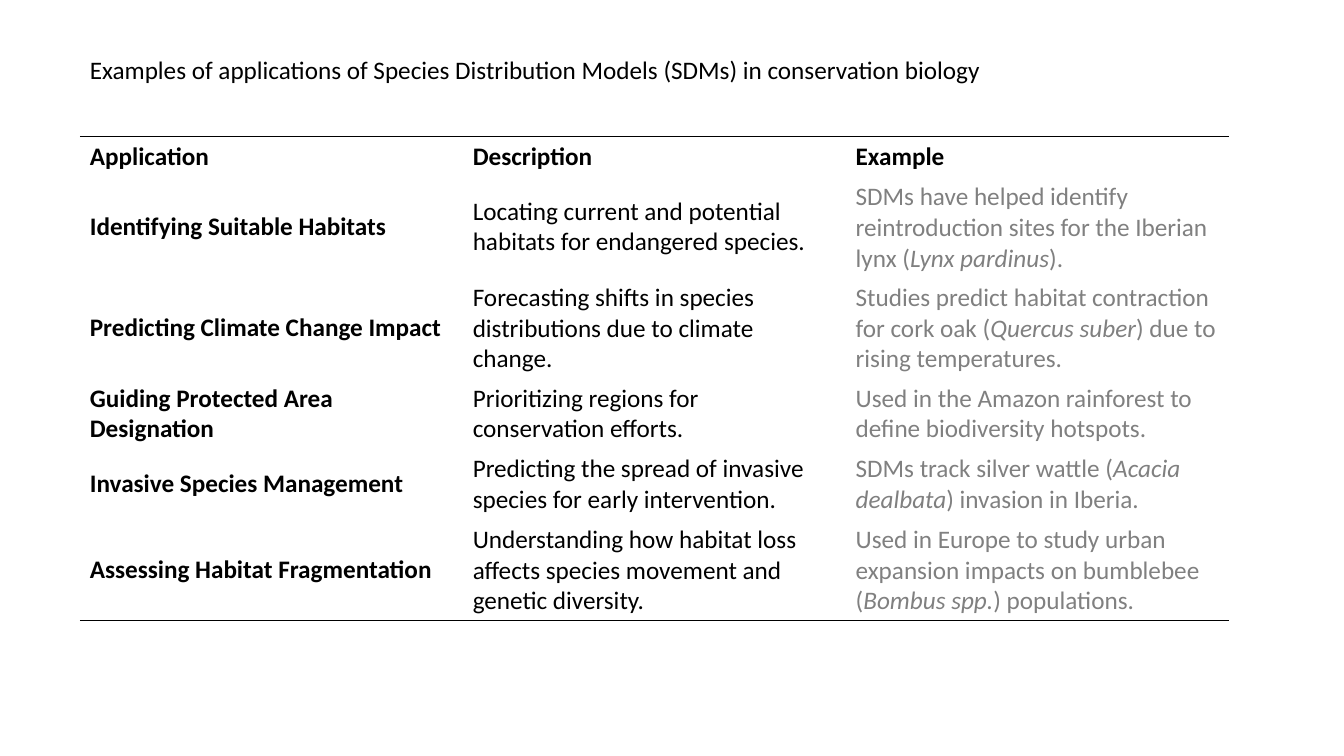
from dataclasses import dataclass

from lxml import etree
from pptx import Presentation
from pptx import util as u
from pptx.dml.color import RGBColor
from pptx.enum import text
from pptx.oxml import ns

BLACK = "000000"
GREY = "808080"
LEFT = u.Cm(2.01)
WIDE = u.Cm(9.65)
LINE = 0.76
PAD = 0.25


@dataclass
class Row:
    name: str
    use: str
    case: str
    lines: int


@dataclass
class Look:
    tint: str = BLACK
    bold: bool = False


ROWS = [
    Row("Application", "Description", "Example", 1),
    Row("Identifying Suitable Habitats",
        "Locating current and potential habitats for endangered species.",
        "SDMs have helped identify reintroduction sites for the Iberian lynx (*Lynx pardinus*).", 3),
    Row("Predicting Climate Change Impact",
        "Forecasting shifts in species distributions due to climate change.",
        "Studies predict habitat contraction for cork oak (*Quercus suber*) due to rising temperatures.", 3),
    Row("Guiding Protected Area Designation",
        "Prioritizing regions for conservation efforts.",
        "Used in the Amazon rainforest to define biodiversity hotspots.", 2),
    Row("Invasive Species Management",
        "Predicting the spread of invasive species for early intervention.",
        "SDMs track silver wattle (*Acacia dealbata*) invasion in Iberia.", 2),
    Row("Assessing Habitat Fragmentation",
        "Understanding how habitat loss affects species movement and genetic diversity.",
        "Used in Europe to study urban expansion impacts on bumblebee (*Bombus spp.*) populations.", 3),
]
HEAD = [Look(bold=True)] * 3
BODY = [Look(bold=True), Look(), Look(GREY)]


def paint(font, tint: str) -> None:
    font.color.rgb = RGBColor.from_string(tint)


def write(frame, words: str, look: Look) -> None:
    para = frame.paragraphs[0]
    para.alignment = text.PP_ALIGN.LEFT
    for i, part in enumerate(words.split("*")):
        run = para.add_run()
        run.text = part
        run.font.name = "Calibri"
        run.font.size = u.Pt(18)
        run.font.bold = look.bold
        run.font.italic = i % 2 == 1
        paint(run.font, look.tint)


def rule(cell, edge: str) -> None:
    props = cell._tc.get_or_add_tcPr()
    for side in "LRTB":
        line = etree.SubElement(props, ns.qn(f"a:ln{side}"), w=str(u.Pt(1)))
        if side == edge:
            fill = etree.SubElement(line, ns.qn("a:solidFill"))
            etree.SubElement(fill, ns.qn("a:srgbClr"), val=BLACK)
        else:
            etree.SubElement(line, ns.qn("a:noFill"))


def add_title(slide) -> None:
    title = slide.shapes.title
    title.left, title.top = LEFT, u.Cm(1.24)
    title.width, title.height = u.Cm(25.68), u.Cm(1.02)
    frame = title.text_frame
    frame.word_wrap = True
    frame.auto_size = text.MSO_AUTO_SIZE.SHAPE_TO_FIT_TEXT
    frame.vertical_anchor = text.MSO_ANCHOR.TOP
    write(frame, "Examples of applications of Species Distribution Models (SDMs) in conservation biology", Look())


def add_grid(slide) -> None:
    highs = [u.Cm(LINE * row.lines + PAD) for row in ROWS]
    grid = slide.shapes.add_table(
        len(ROWS), 3, LEFT, u.Cm(3.43), 3 * WIDE, sum(highs)).table
    grid.first_row = grid.horz_banding = False
    for col in grid.columns:
        col.width = WIDE
    edges = {0: "T", len(ROWS) - 1: "B"}
    for r, (row, high) in enumerate(zip(ROWS, highs)):
        grid.rows[r].height = high
        looks = BODY if r else HEAD
        for c, (words, look) in enumerate(zip((row.name, row.use, row.case), looks)):
            cell = grid.cell(r, c)
            cell.vertical_anchor = text.MSO_ANCHOR.MIDDLE
            rule(cell, edges.get(r, ""))
            cell.fill.background()
            write(cell.text_frame, words, look)


def main() -> None:
    deck = Presentation()
    deck.slide_width, deck.slide_height = u.Cm(33.87), u.Cm(19.05)
    slide = deck.slides.add_slide(deck.slide_layouts[5])
    add_title(slide)
    add_grid(slide)
    deck.save("out.pptx")


if __name__ == "__main__":
    main()
